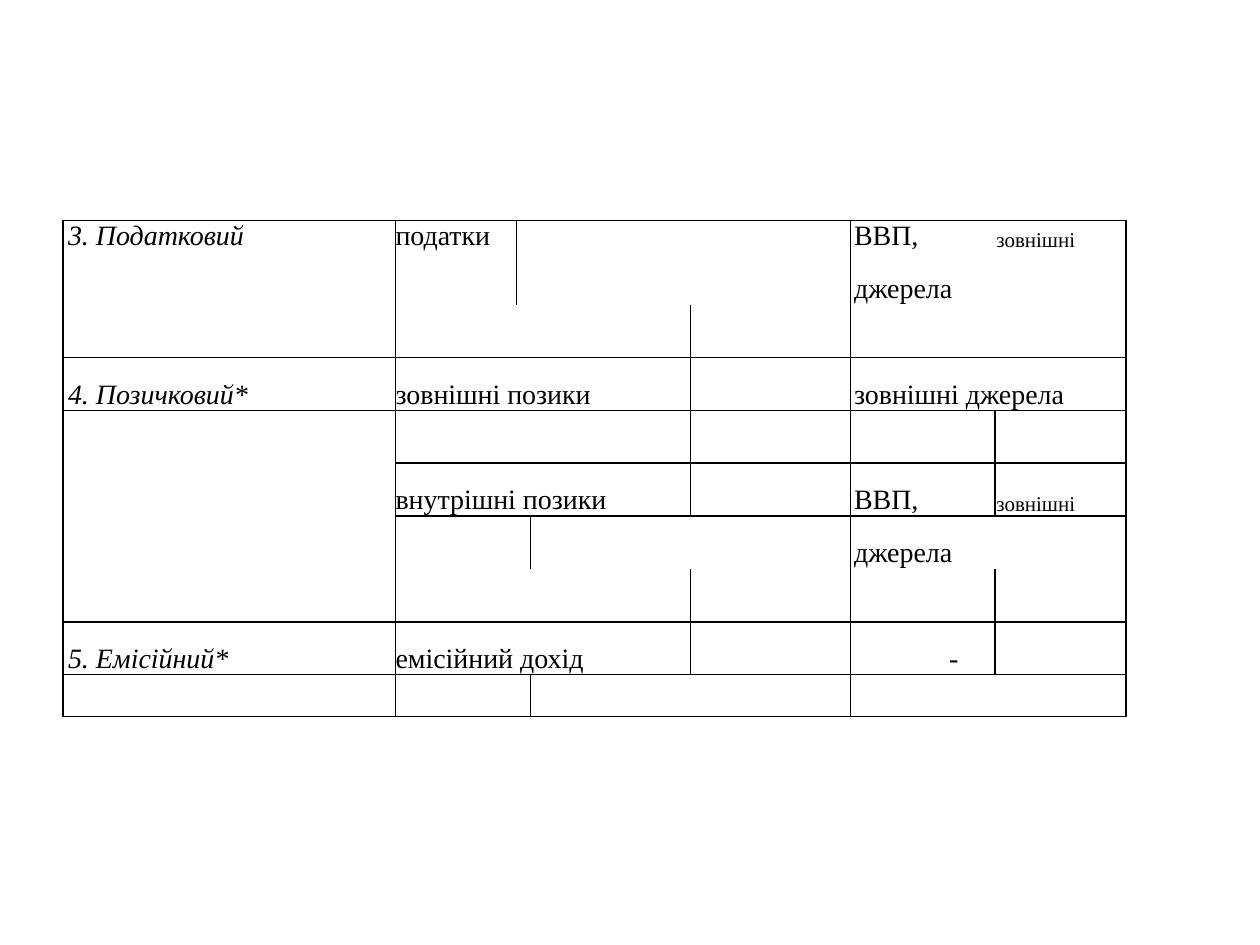
from dataclasses import dataclass

from lxml.etree import SubElement
from pptx import Presentation
from pptx.dml.color import RGBColor
from pptx.enum.text import MSO_ANCHOR, PP_ALIGN
from pptx.oxml.ns import qn
from pptx.util import Inches, Pt


@dataclass(frozen=True)
class Theme:
    font: str = "Times New Roman"
    ink: str = "000000"
    body: int = 16
    small: int = 12
    line: int = 1
    plain_style: str = "{2D5ABB26-0587-4C30-8999-92F81FD0307C}"


THEME = Theme()
LEFT, TOP = 0.5, 1.75
COLS = [0.61, 0.56, 1.04, 0.43, 0.96, 0.11, 1.27, 1.27, 1.15, 1.04]
ROWS = [0.24] + [0.42] * 8 + [0.33]

KIND, INCOME, SOURCE = (0, 3), (4, 7), (8, 9)
BANDS = {
    KIND: [(0, 2), (3, 7), (8, 9)],
    INCOME: [(0, 2), (3, 4), (5, 7), (8, 9)],
    SOURCE: [(0, 2), (3, 4), (5, 7), (8, 9)],
}
SPANS = {
    **{(r, 0): 3 for r in (0, 2, 3, 7, 8)},
    **{(r, 4): 3 for r in (2, 3, 4, 5, 7, 8)},
    **{(r, 4): 2 for r in (6, 9)},
    **{(r, 5): 2 for r in (0, 1)},
    **{(r, 8): 2 for r in (2, 3)},
}

KIND_FMT = dict(italic=True, indent=0.04)
SOURCE_FMT = dict(indent=0.03)
NOTE_FMT = dict(indent=0.01, size=THEME.small)
TEXTS = [
    (0, 0, "3. Податковий", KIND_FMT),
    (0, 4, "податки", {}),
    (0, 8, "ВВП,", SOURCE_FMT),
    (0, 9, "зовнішні", dict(NOTE_FMT, spacing=11.2)),
    (1, 8, "джерела", SOURCE_FMT),
    (3, 0, "4. Позичковий*", KIND_FMT),
    (3, 4, "зовнішні позики", {}),
    (3, 8, "зовнішні джерела", SOURCE_FMT),
    (5, 4, "внутрішні позики", {}),
    (5, 8, "ВВП,", SOURCE_FMT),
    (5, 9, "зовнішні", dict(NOTE_FMT, spacing=10.8)),
    (6, 8, "джерела", SOURCE_FMT),
    (8, 0, "5. Емісійний*", KIND_FMT),
    (8, 4, "емісійний дохід", {}),
    (8, 8, "-", dict(italic=True, indent=0.49, align=PP_ALIGN.CENTER)),
]


def write(cell, text, size=THEME.body, italic=False, indent=0, align=None, spacing=None):
    p = cell.text_frame.paragraphs[0]
    p.alignment = align
    if spacing:
        p.line_spacing = Pt(spacing)
    p._p.get_or_add_pPr().set("marL", str(Inches(indent)))
    r = p.add_run()
    r.text = text
    r.font.name = THEME.font
    r.font.size = Pt(size)
    r.font.italic = italic
    r.font.color.rgb = RGBColor.from_string(THEME.ink)


def add_border(cell, side):
    ln = SubElement(cell._tc.get_or_add_tcPr(), qn(f"a:ln{side}"), w=str(Pt(THEME.line)))
    SubElement(SubElement(ln, qn("a:solidFill")), qn("a:srgbClr"), val=THEME.ink)


def frame(table, rows, cols):
    (top, bottom), (left, right) = rows, cols
    for r in range(top, bottom + 1):
        for c in range(left, right + 1):
            cell = table.cell(r, c)
            if cell.is_spanned:
                continue
            last = c + SPANS.get((r, c), 1) - 1
            edges = {"L": c == left, "R": last == right, "T": r == top, "B": r == bottom}
            for side, on_edge in edges.items():
                if on_edge:
                    add_border(cell, side)


def main():
    prs = Presentation()
    prs.slide_width, prs.slide_height = Inches(10), Inches(7.5)
    s = prs.slides.add_slide(prs.slide_layouts[6])
    table = s.shapes.add_table(
        len(ROWS), len(COLS), Inches(LEFT), Inches(TOP), Inches(sum(COLS)), Inches(sum(ROWS))
    ).table
    table.first_row = table.horz_banding = False
    table._tbl.tblPr.find(qn("a:tableStyleId")).text = THEME.plain_style
    for col, width in zip(table.columns, COLS):
        col.width = Inches(width)
    for row, height in zip(table.rows, ROWS):
        row.height = Inches(height)

    for (r, c), n in SPANS.items():
        table.cell(r, c).merge(table.cell(r, c + n - 1))
    for r, c, text, fmt in TEXTS:
        write(table.cell(r, c), text, **fmt)
    for cols, bands in BANDS.items():
        for rows in bands:
            frame(table, rows, cols)

    for cell in table.iter_cells():
        cell.margin_left = cell.margin_right = cell.margin_top = cell.margin_bottom = 0
        cell.vertical_anchor = MSO_ANCHOR.BOTTOM
        cell.fill.background()
        p = cell.text_frame.paragraphs[0]
        if not p.runs:
            SubElement(p._p, qn("a:endParaRPr"), sz=str(THEME.small * 100))

    prs.save("out.pptx")


if __name__ == "__main__":
    main()
